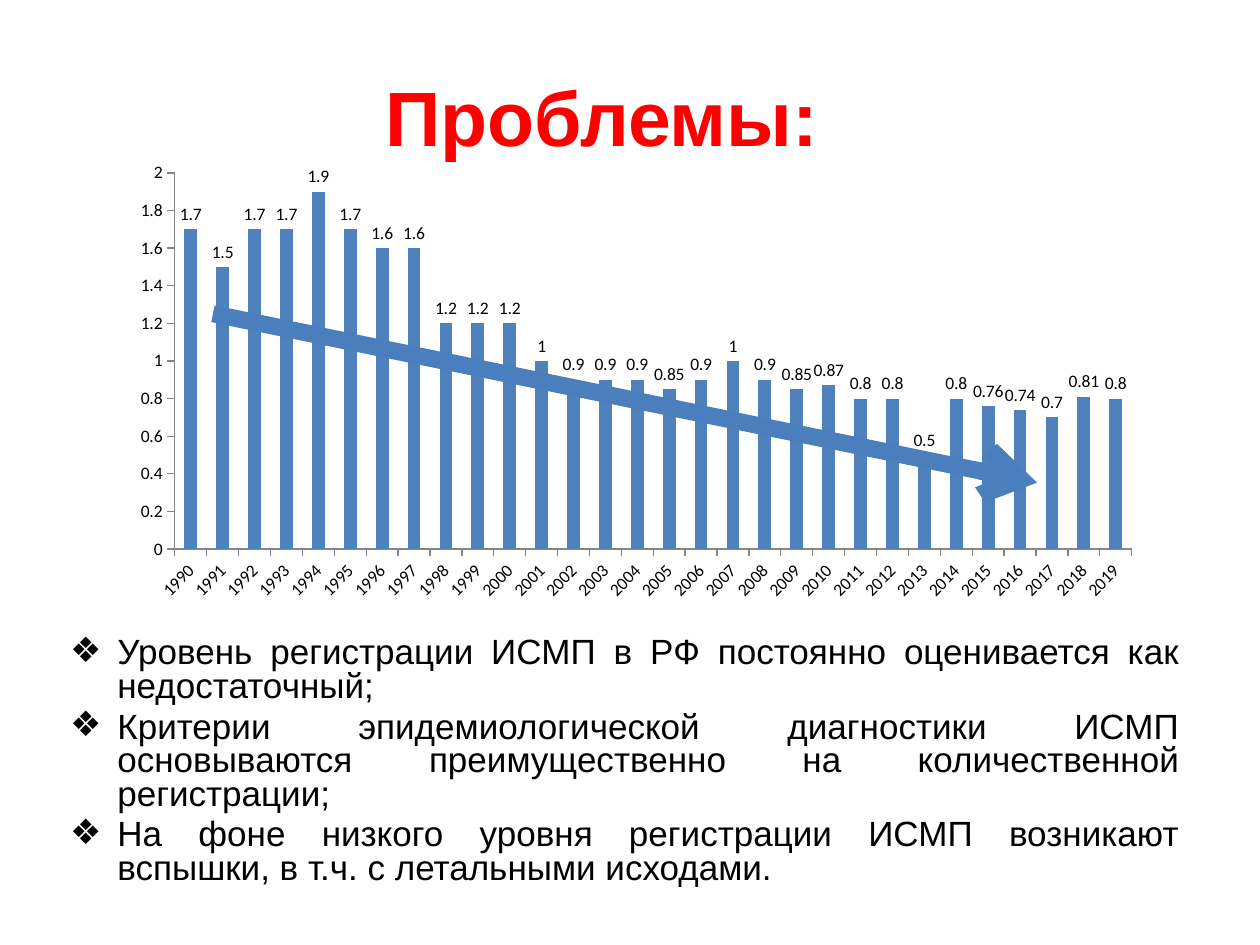
import pptx
import pptx.chart.data
import pptx.dml.color
import pptx.enum.chart
import pptx.enum.shapes
import pptx.enum.text
import pptx.oxml
import pptx.oxml.ns
import pptx.util
from lxml import etree

Pt = pptx.util.Pt
qn = pptx.oxml.ns.qn


def color(hex_string):
    return pptx.dml.color.RGBColor.from_string(hex_string)


def add_text_box(left, top, width, height, anchor):
    box = slide.shapes.add_textbox(Pt(left), Pt(top), Pt(width), Pt(height))
    box.text_frame.word_wrap = True
    box.text_frame.vertical_anchor = anchor
    return box.text_frame


deck = pptx.Presentation()
deck.slide_width, deck.slide_height = Pt(720), Pt(540)
slide = deck.slides.add_slide(deck.slide_layouts[6])

# Title
title = add_text_box(20, 21, 648, 90, pptx.enum.text.MSO_ANCHOR.MIDDLE)
para = title.paragraphs[0]
para.alignment = pptx.enum.text.PP_ALIGN.CENTER
run = para.add_run()
run.text = "Проблемы:"
run.font.size, run.font.name, run.font.bold = Pt(44), "Arial", True
run.font.color.rgb = color("FF0000")

# Problem list
problems = [
    "Уровень регистрации ИСМП в РФ постоянно оценивается как недостаточный;",
    "Критерии эпидемиологической диагностики ИСМП основываются "
    "преимущественно на количественной регистрации;",
    "На фоне низкого уровня регистрации ИСМП возникают вспышки, "
    "в т.ч. с летальными исходами.",
]
body = add_text_box(33, 361, 648, 163, pptx.enum.text.MSO_ANCHOR.TOP)
for index, problem in enumerate(problems):
    para = body.add_paragraph() if index else body.paragraphs[0]
    para.alignment = pptx.enum.text.PP_ALIGN.JUSTIFY
    para.line_spacing = 0.8
    para.space_before = Pt(4)
    properties = para._p.get_or_add_pPr()
    properties.set("marL", str(Pt(27)))
    properties.set("indent", str(Pt(-27)))
    etree.SubElement(properties, qn("a:buFont"), typeface="Arial")
    etree.SubElement(properties, qn("a:buChar"), char="❖")
    run = para.add_run()
    run.text = problem
    run.font.size, run.font.name = Pt(20), "Arial"
    run.font.color.rgb = color("000000")

# Chart of yearly rates
rates = [1.7, 1.5, 1.7, 1.7, 1.9, 1.7, 1.6, 1.6, 1.2, 1.2,
         1.2, 1, 0.9, 0.9, 0.9, 0.85, 0.9, 1, 0.9, 0.85,
         0.87, 0.8, 0.8, 0.5, 0.8, 0.76, 0.74, 0.7, 0.81, 0.8]
data = pptx.chart.data.CategoryChartData()
data.categories = [str(1990 + offset) for offset in range(len(rates))]
data.add_series("Series 1", rates)
chart = slide.shapes.add_chart(
    pptx.enum.chart.XL_CHART_TYPE.COLUMN_CLUSTERED,
    Pt(70.5), Pt(88.5), Pt(588), Pt(259), data).chart
chart.has_legend = False
chart.has_title = False
chart.font.size, chart.font.name = Pt(10), "Calibri"
chart.font.color.rgb = color("000000")

plot = chart.plots[0]
plot.gap_width = 150
plot.vary_by_categories = False
series_fill = plot.series[0].format.fill
series_fill.solid()
series_fill.fore_color.rgb = color("4F81BD")
plot.has_data_labels = True
plot.data_labels.show_value = True
plot.data_labels.position = pptx.enum.chart.XL_LABEL_POSITION.OUTSIDE_END

for axis in (chart.category_axis, chart.value_axis):
    axis.has_major_gridlines = False
    axis.major_tick_mark = pptx.enum.chart.XL_TICK_MARK.OUTSIDE
    axis.minor_tick_mark = pptx.enum.chart.XL_TICK_MARK.NONE
    axis.format.line.color.rgb = color("868686")
    axis.format.line.width = Pt(0.75)
    axis.tick_labels.font.size = Pt(10)
chart.value_axis.minimum_scale = 0
chart.value_axis.maximum_scale = 2
chart.value_axis.major_unit = 0.2
category_text = chart.category_axis._element.find(qn("c:txPr"))
category_text.find(qn("a:bodyPr")).set("rot", str(-45 * 60000))

# Fixed inner plot area, as fractions of the chart
plot_area = plot._element.getparent()
for old_layout in plot_area.findall(qn("c:layout")):
    plot_area.remove(old_layout)
layout = etree.Element(qn("c:layout"))
plot_area.insert(0, layout)
manual = etree.SubElement(layout, qn("c:manualLayout"))
for tag, value in [("layoutTarget", "inner"), ("xMode", "edge"), ("yMode", "edge"),
                   ("x", "0.05"), ("y", "0.04"), ("w", "0.93"), ("h", "0.83")]:
    etree.SubElement(manual, qn("c:" + tag), val=value)

# Downward trend arrow
trend = slide.shapes.add_connector(
    pptx.enum.shapes.MSO_CONNECTOR.STRAIGHT, Pt(121.7), Pt(179.3), Pt(592.6), Pt(275.8))
trend.line.color.rgb = color("4B7EBC")
trend.line.width = Pt(9.75)
etree.SubElement(trend.line._get_or_add_ln(), qn("a:tailEnd"), type="arrow")
etree.SubElement(trend._element.spPr, qn("a:effectLst"))

deck.save("out.pptx")
